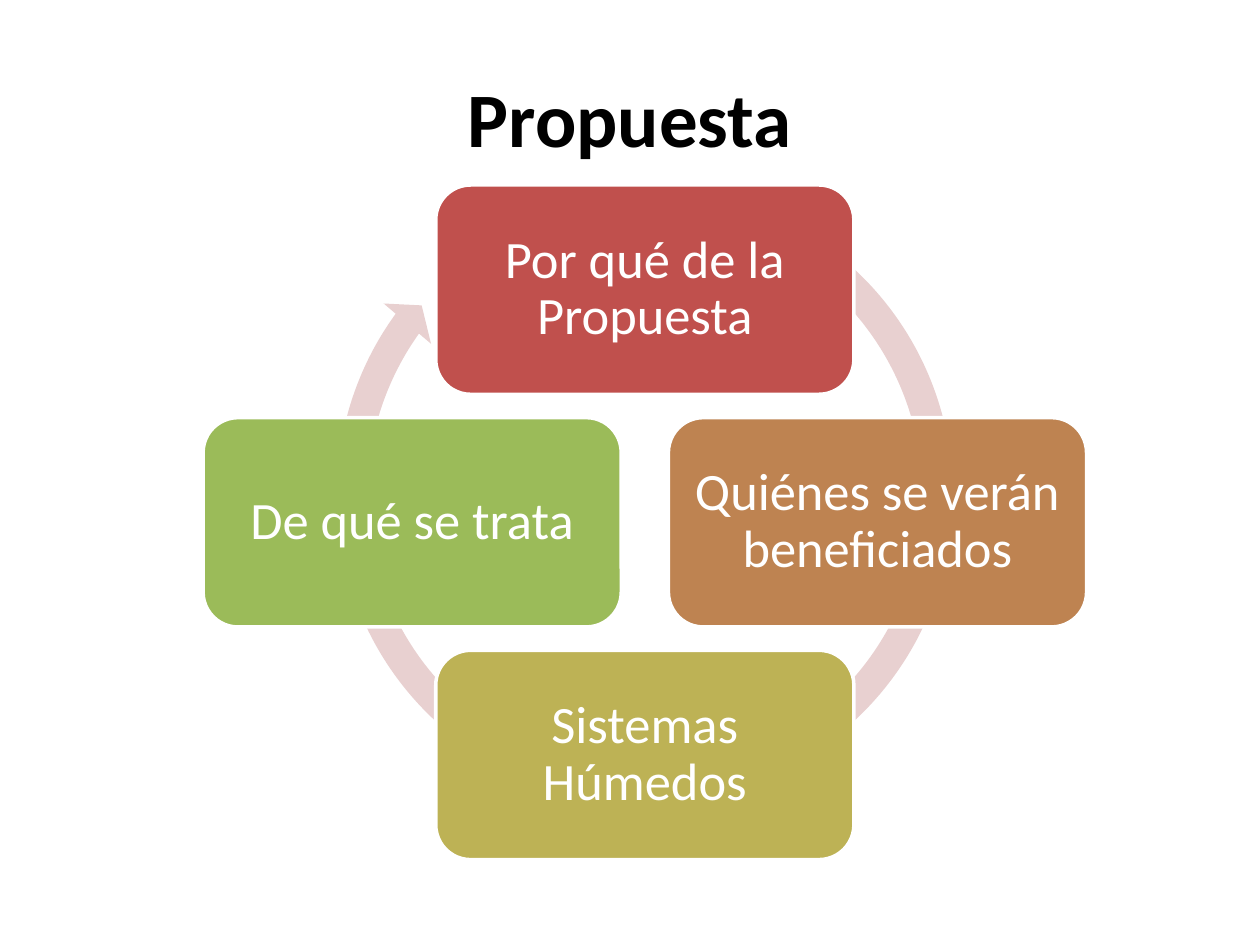
import pptx
import pptx.util
import pptx.dml.color
import pptx.enum.shapes
import pptx.enum.text

Cm = pptx.util.Cm
Pt = pptx.util.Pt
RGBColor = pptx.dml.color.RGBColor
MSO_SHAPE = pptx.enum.shapes.MSO_SHAPE
PP_ALIGN = pptx.enum.text.PP_ALIGN
MSO_ANCHOR = pptx.enum.text.MSO_ANCHOR

BLACK = RGBColor(0x00, 0x00, 0x00)
WHITE = RGBColor(0xFF, 0xFF, 0xFF)
PINK = RGBColor(0xE8, 0xD0, 0xD0)
RED = RGBColor(0xC0, 0x50, 0x4D)
BROWN = RGBColor(0xBE, 0x83, 0x51)
OLIVE = RGBColor(0xBD, 0xB2, 0x55)
GREEN = RGBColor(0x9B, 0xBB, 0x59)

CENTER_X = 13
CARDS_Y = 10.53
RING_Y = 9.98
RING_SIZE = 13.06
CARD_W, CARD_H = 8.43, 4.22
STEP = 4.69

# Text, colour, and direction from the centre of the cycle
STAGES = [
    ("Por qué de la Propuesta", RED, 0, -1),
    ("Quiénes se verán beneficiados", BROWN, 1, 0),
    ("Sistemas Húmedos", OLIVE, 0, 1),
    ("De qué se trata", GREEN, -1, 0),
]


class CycleSlide:
    font = "Calibri"

    def __init__(self, prs):
        self.slide = prs.slides.add_slide(prs.slide_layouts[5])

    def centered_text(self, tf, text, size, color, bold=False):
        tf.word_wrap = True
        tf.vertical_anchor = MSO_ANCHOR.MIDDLE
        p = tf.paragraphs[0]
        p.alignment = PP_ALIGN.CENTER
        r = p.add_run()
        r.text = text
        r.font.name = self.font
        r.font.size = Pt(size)
        r.font.bold = bold
        r.font.color.rgb = color
        return p

    def title(self, text):
        sp = self.slide.shapes.title
        sp.left, sp.top, sp.width, sp.height = Cm(1.27), Cm(0.76), Cm(22.86), Cm(3.18)
        self.centered_text(sp.text_frame, text, 44, BLACK, bold=True)

    def centered_shape(self, kind, x, y, w, h, fill):
        sp = self.slide.shapes.add_shape(
            kind, Cm(x - w / 2), Cm(y - h / 2), Cm(w), Cm(h))
        sp.shadow.inherit = False
        sp.fill.solid()
        sp.fill.fore_color.rgb = fill
        return sp

    def ring(self):
        sp = self.centered_shape(MSO_SHAPE.CIRCULAR_ARROW, CENTER_X, RING_Y,
                                 RING_SIZE, RING_SIZE, PINK)
        sp.line.fill.background()
        # Thickness, head angle, end angle, start angle, head width
        for i, value in enumerate((0.047, 2.729, 129.488, 179.513, 0.048)):
            sp.adjustments[i] = value

    def card(self, text, fill, dx, dy):
        sp = self.centered_shape(MSO_SHAPE.ROUNDED_RECTANGLE,
                                 CENTER_X + dx * STEP, CARDS_Y + dy * STEP,
                                 CARD_W, CARD_H, fill)
        sp.line.color.rgb = WHITE
        sp.line.width = Pt(2)
        tf = sp.text_frame
        tf.margin_left = tf.margin_right = tf.margin_top = tf.margin_bottom = Cm(0.1)
        self.centered_text(tf, text, 30, WHITE).line_spacing = 0.9


def main():
    prs = pptx.Presentation()
    prs.slide_width, prs.slide_height = Cm(25.4), Cm(19.05)
    s = CycleSlide(prs)
    s.title("Propuesta")
    s.ring()
    for stage in STAGES:
        s.card(*stage)
    prs.save("out.pptx")


if __name__ == "__main__":
    main()
